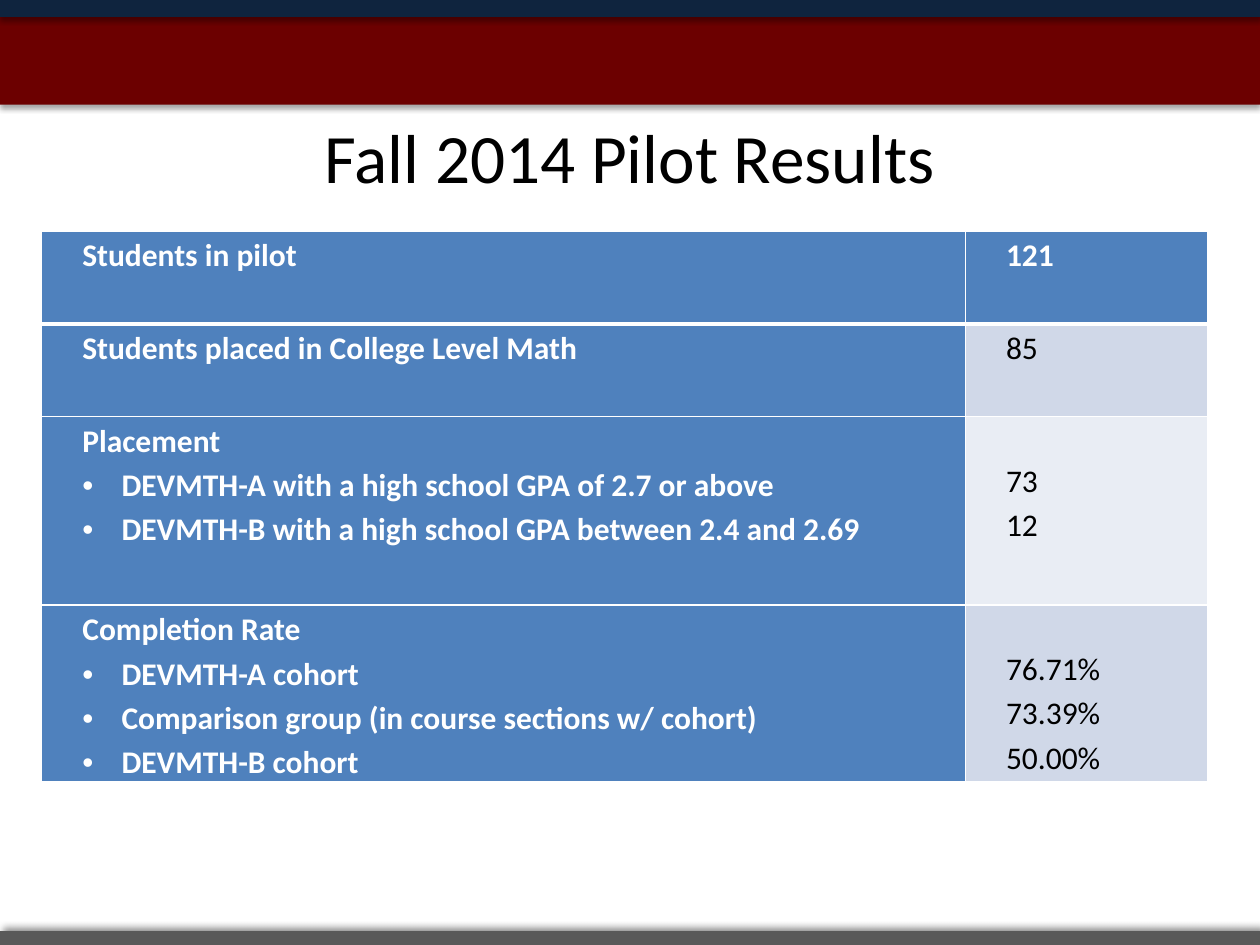
"""Build the Fall 2014 pilot results slide."""
from dataclasses import dataclass

from lxml.etree import SubElement
from pptx import Presentation
from pptx.dml.color import RGBColor
from pptx.enum.shapes import MSO_SHAPE
from pptx.enum.text import MSO_ANCHOR, PP_ALIGN
from pptx.oxml.ns import qn
from pptx.util import Cm, Pt

COLORS = {"navy": "0F243E", "maroon": "6C0000", "gray": "595959", "blue": "4F81BD",
          "band": "D0D8E8", "light": "E9EDF4", "white": "FFFFFF", "black": "000000"}
TITLE = {"name": "Calibri", "size": Pt(39.6), "bold": False}
BODY = {"name": "Calibri", "size": Pt(18), "bold": False}
BOLD = {**BODY, "bold": True}
FRAME = {"margin_left": 0, "margin_right": 0, "margin_top": 0, "margin_bottom": 0,
         "word_wrap": True, "vertical_anchor": MSO_ANCHOR.MIDDLE}
CELL = {"margin_left": Cm(0.18), "margin_right": Cm(0.18), "margin_top": 0,
        "margin_bottom": 0, "vertical_anchor": MSO_ANCHOR.TOP}


@dataclass
class Bar:
    """A full-width band with its shadow, lengths in cm and points."""
    top: float
    height: float
    color: str
    alpha: int
    blur: float
    dist: float
    angle: int


@dataclass
class Row:
    """A table row: heading, bullets and the values beside them."""
    height: float
    heading: str
    bullets: list[str]
    values: list[str]
    fill: str


BARS = [Bar(18.77, 0.28, "gray", 43, 4, 3, 315),
        Bar(0, 2.11, "maroon", 35, 3.1, 1.8, 90),
        Bar(0, 0.34, "navy", 35, 3.1, 1.8, 90)]
ROWS = [
    Row(1.87, "Students in pilot", [], ["121"], "blue"),
    Row(1.87, "Students placed in College Level Math", [], ["85"], "band"),
    Row(3.8, "Placement", ["DEVMTH-A with a high school GPA of 2.7 or above",
                           "DEVMTH-B with a high school GPA between 2.4 and 2.69"],
        ["73", "12"], "light"),
    Row(3.56, "Completion Rate", ["DEVMTH-A cohort",
                                  "Comparison group (in course sections w/ cohort)",
                                  "DEVMTH-B cohort"],
        ["76.71%", "73.39%", "50.00%"], "band"),
]


def rgb(name: str) -> RGBColor:
    """Return a named colour."""
    return RGBColor.from_string(COLORS[name])


def apply(obj, fmt: dict) -> None:
    """Set every format value on an object."""
    for key, value in fmt.items():
        setattr(obj, key, value)


def add_run(p, text: str, fmt: dict, color: str) -> None:
    """Add formatted text to a paragraph."""
    r = p.add_run()
    r.text = text
    apply(r.font, fmt)
    r.font.color.rgb = rgb(color)


def add_bar(s, bar: Bar, width: int) -> None:
    """Draw a shadowed band across the slide."""
    sp = s.shapes.add_shape(MSO_SHAPE.RECTANGLE, 0, Cm(bar.top), width, Cm(bar.height))
    sp.fill.solid()
    sp.fill.fore_color.rgb = rgb(bar.color)
    sp.line.fill.background()
    sp.shadow.inherit = False
    effects = sp._element.spPr.find(qn("a:effectLst"))
    shadow = SubElement(effects, qn("a:outerShdw"), blurRad=str(Pt(bar.blur)),
                        dist=str(Pt(bar.dist)), dir=str(bar.angle * 60000),
                        rotWithShape="0")
    clr = SubElement(shadow, qn("a:srgbClr"), val=COLORS["black"])
    SubElement(clr, qn("a:alpha"), val=str(bar.alpha * 1000))


def add_title(s, text: str) -> None:
    """Draw the centred title."""
    tf = s.shapes.add_textbox(Cm(1.27), Cm(2.34), Cm(22.86), Cm(1.6)).text_frame
    apply(tf, FRAME)
    p = tf.paragraphs[0]
    p.alignment = PP_ALIGN.CENTER
    add_run(p, text, TITLE, "black")


def add_line(tf, i: int, text: str, fmt: dict, color: str, bullet: bool) -> None:
    """Write paragraph i of a cell, bulleted or plain."""
    p = tf.add_paragraph() if i else tf.paragraphs[0]
    pPr = p._p.get_or_add_pPr()
    pPr.set("marL", str(Cm(1.43 if bullet else 0.64)))
    pPr.set("indent", str(Cm(-0.79 if bullet else 0)))
    if bullet:
        SubElement(pPr, qn("a:buFont"), typeface="Arial")
        SubElement(pPr, qn("a:buChar"), char="•")
    p.line_spacing = 1.15
    add_run(p, text, fmt, color)


def style_cell(cell, fill: str, header: bool) -> None:
    """Give a cell its margins, white borders and fill."""
    apply(cell, CELL)
    tcPr = cell._tc.get_or_add_tcPr()
    for side in "LRTB":
        width = Pt(3 if header and side == "B" else 1)
        ln = SubElement(tcPr, qn(f"a:ln{side}"), w=str(width))
        SubElement(SubElement(ln, qn("a:solidFill")), qn("a:srgbClr"), val=COLORS["white"])
    cell.fill.solid()
    cell.fill.fore_color.rgb = rgb(fill)


def add_results(s, rows: list[Row]) -> None:
    """Draw the results table."""
    widths = [18.62, 4.88]
    tbl = s.shapes.add_table(len(rows), len(widths), Cm(0.84), Cm(4.66), Cm(sum(widths)),
                             Cm(sum(row.height for row in rows))).table
    for col, width in zip(tbl.columns, widths):
        col.width = Cm(width)
    for n, row in enumerate(rows):
        header = n == 0
        tbl.rows[n].height = Cm(row.height)
        label, value = tbl.cell(n, 0), tbl.cell(n, 1)
        style_cell(label, "blue", header)
        style_cell(value, row.fill, header)
        for i, text in enumerate([row.heading, *row.bullets]):
            add_line(label.text_frame, i, text, BOLD, "white", i > 0)
        if row.bullets:
            value.margin_top = Cm(0.8)
        fmt, color = (BOLD, "white") if header else (BODY, "black")
        for i, text in enumerate(row.values):
            add_line(value.text_frame, i, text, fmt, color, False)


def main() -> None:
    """Build and save the slide."""
    prs = Presentation()
    apply(prs, {"slide_width": Cm(25.4), "slide_height": Cm(19.05)})
    s = prs.slides.add_slide(prs.slide_layouts[6])
    for bar in BARS:
        add_bar(s, bar, prs.slide_width)
    add_title(s, "Fall 2014 Pilot Results")
    add_results(s, ROWS)
    prs.save("out.pptx")


if __name__ == "__main__":
    main()
